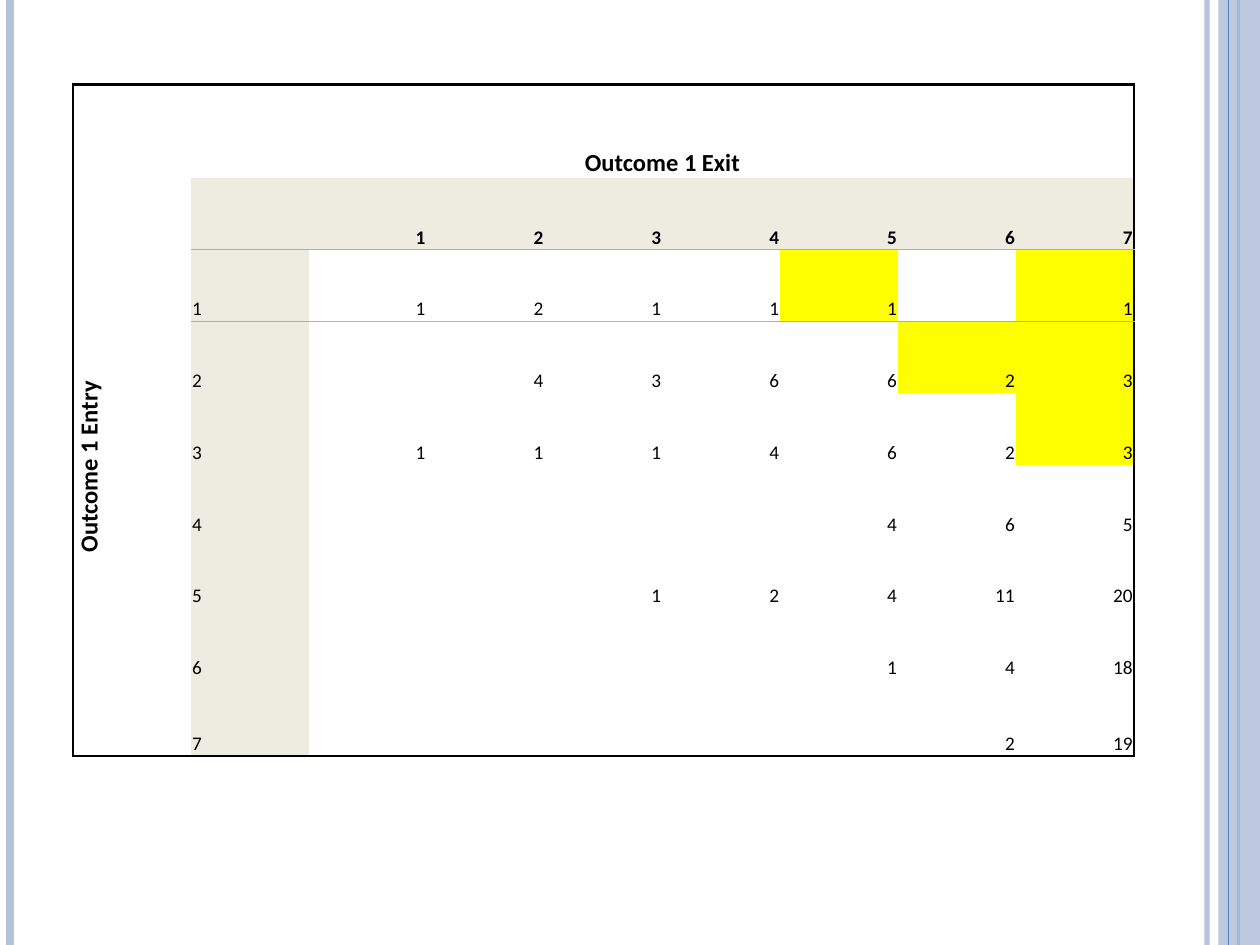
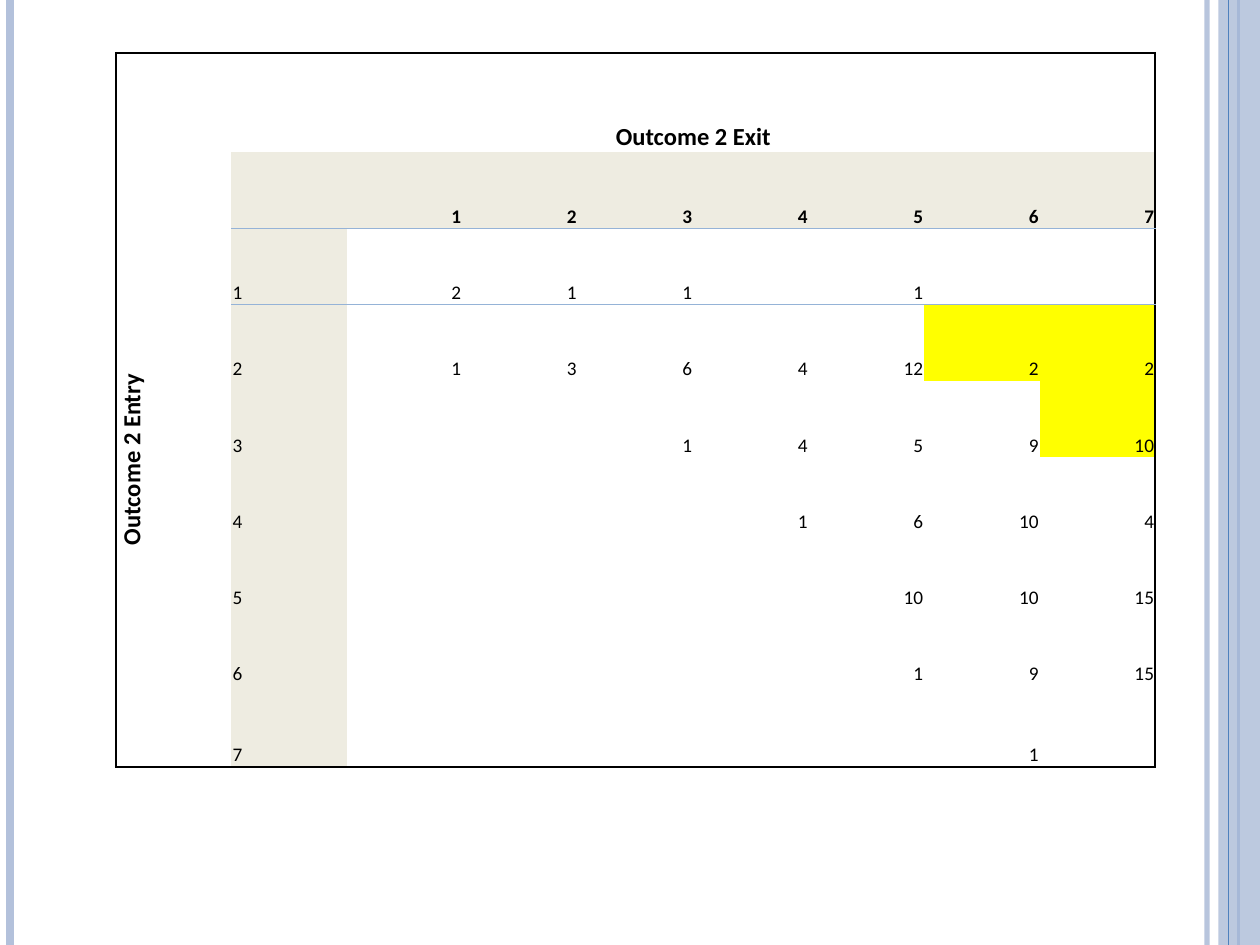
from lxml.etree import SubElement
from pptx import Presentation
from pptx.dml.color import RGBColor
from pptx.enum.shapes import MSO_CONNECTOR as Connector, MSO_SHAPE as Shape
from pptx.enum.text import MSO_ANCHOR as Anchor, PP_ALIGN as Align
from pptx.oxml.ns import qn
from pptx.util import Inches, Pt

COLORS = {
    "ink": "000000",
    "band": "B3C1DB",
    "accent": "4F81BD",
    "header": "EEECE1",
    "rule": "95B3D7",
    "highlight": "FFFF00",
}
FONT = "Calibri"
WIDTH, HEIGHT = Inches(10), Inches(7.5)
RATINGS = range(1, 8)
GRID = len(RATINGS) + 2
TITLE_SHARE, LAST_SHARE = 0.139, 0.113
PLAIN_STYLE = "{2D5ABB26-0587-4C30-8999-92F81FD0307C}"

OUTCOMES = [
    {
        "name": "Outcome 1",
        "frame": (0.58, 0.67, 8.42, 5.33),
        "counts": [
            [1, 2, 1, 1, 1, None, 1],
            [None, 4, 3, 6, 6, 2, 3],
            [1, 1, 1, 4, 6, 2, 3],
            [None, None, None, None, 4, 6, 5],
            [None, None, 1, 2, 4, 11, 20],
            [None, None, None, None, 1, 4, 18],
            [None, None, None, None, None, 2, 19],
        ],
        "large_gains": {(1, 5), (1, 7), (2, 6), (2, 7), (3, 7)},
    },
    {
        "name": "Outcome 2",
        "frame": (0.92, 0.42, 8.25, 5.67),
        "counts": [
            [2, 1, 1, None, 1, None, None],
            [1, 3, 6, 4, 12, 2, 2],
            [None, None, 1, 4, 5, 9, 10],
            [None, None, None, 1, 6, 10, 4],
            [None, None, None, None, 10, 10, 15],
            [None, None, None, None, 1, 9, 15],
            [None, None, None, None, None, 1, None],
        ],
        "large_gains": {(2, 6), (2, 7), (3, 7)},
    },
]


def rgb(role):
    return RGBColor.from_string(COLORS[role])


def set_opacity(properties, percent):
    color = next(properties.iter(qn("a:srgbClr")))
    SubElement(color, qn("a:alpha"), val=str(percent * 1000))


def add_stripe(slide, share, role, weight, opacity=100):
    x = int(WIDTH * share)
    stripe = slide.shapes.add_connector(Connector.STRAIGHT, x, 0, x, HEIGHT)
    stripe.line.color.rgb = rgb(role)
    stripe.line.width = Pt(weight)
    properties = stripe._element.spPr
    if opacity < 100:
        set_opacity(properties, opacity)
    SubElement(properties, qn("a:effectLst"))


def add_side_band(slide, share, opacity):
    left = int(WIDTH * share)
    band = slide.shapes.add_shape(Shape.RECTANGLE, left, 0, WIDTH - left, HEIGHT)
    band.shadow.inherit = False
    band.fill.solid()
    band.fill.fore_color.rgb = rgb("band")
    set_opacity(band._element.spPr, opacity)
    band.line.fill.background()


def add_margins(slide):
    add_stripe(slide, 0.958, "band", 3, 93)
    add_stripe(slide, 0.008, "band", 4.5)
    add_stripe(slide, 0.983, "accent", 1.5)
    add_side_band(slide, 0.967, 87)
    add_stripe(slide, 0.975, "accent", 0.75)


def cell_borders(cell, row, column):
    frame, rule = ("ink", 1.5), ("rule", 0.5)
    borders = {}
    if column == 0:
        borders["L"] = frame
    if column + cell.span_width == GRID:
        borders["R"] = frame
    if row == 0:
        borders["T"] = frame
    elif row == 2 and column > 0:
        borders["T"] = rule
    if row + cell.span_height == GRID:
        borders["B"] = frame
    elif row == 1 and column > 0:
        borders["B"] = rule
    return borders


def draw_borders(cell, borders):
    properties = cell._tc.get_or_add_tcPr()
    for side, (role, weight) in borders.items():
        edge = SubElement(properties, qn(f"a:ln{side}"), w=str(Pt(weight)))
        fill = SubElement(edge, qn("a:solidFill"))
        SubElement(fill, qn("a:srgbClr"), val=COLORS[role])


def fill_cell(cell, role):
    if role:
        cell.fill.solid()
        cell.fill.fore_color.rgb = rgb(role)
    else:
        cell.fill.background()


def write_cell(cell, text, align=Align.RIGHT, size=11, bold=False, anchor=Anchor.BOTTOM):
    cell.margin_left = cell.margin_right = cell.margin_top = Inches(0.01)
    cell.margin_bottom = 0
    cell.vertical_anchor = anchor
    paragraph = cell.text_frame.paragraphs[0]
    paragraph.alignment = align
    run = paragraph.add_run()
    run.text = str(text)
    run.font.name = FONT
    run.font.size = Pt(size)
    run.font.bold = bold
    run.font.color.rgb = rgb("ink")


def add_grid(slide, frame):
    left, top, width, height = map(Inches, frame)
    table = slide.shapes.add_table(GRID, GRID, left, top, width, height).table
    table.first_row = table.horz_banding = False
    next(table._tbl.iter(qn("a:tableStyleId"))).text = PLAIN_STYLE
    middle_share = (1 - TITLE_SHARE - LAST_SHARE) / (GRID - 2)
    shares = [TITLE_SHARE] + [middle_share] * (GRID - 2) + [LAST_SHARE]
    for row, share in zip(table.rows, shares):
        row.height = int(height * share)
    for column in table.columns:
        column.width = width // GRID
    table.cell(0, 1).merge(table.cell(0, GRID - 1))
    table.cell(1, 0).merge(table.cell(GRID - 1, 0))
    return table


def style_grid(table, large_gains):
    for row in range(GRID):
        for column in range(GRID):
            cell = table.cell(row, column)
            draw_borders(cell, cell_borders(cell, row, column))
            role = None
            if row and column and 1 in (row, column):
                role = "header"
            elif (row - 1, column - 1) in large_gains:
                role = "highlight"
            fill_cell(cell, role)


def add_crosstab(slide, name, frame, counts, large_gains):
    table = add_grid(slide, frame)
    style_grid(table, large_gains)
    write_cell(table.cell(0, 1), f"{name} Exit", Align.CENTER, 14, True)
    entry = table.cell(1, 0)
    write_cell(entry, f"{name} Entry", Align.CENTER, 14, True, Anchor.MIDDLE)
    entry._tc.tcPr.set("vert", "vert270")
    for rating, row_counts in zip(RATINGS, counts):
        write_cell(table.cell(1, rating + 1), rating, bold=True)
        write_cell(table.cell(rating + 1, 1), rating, Align.LEFT)
        for exit_rating, count in zip(RATINGS, row_counts):
            if count is not None:
                write_cell(table.cell(rating + 1, exit_rating + 1), count)


def main():
    deck = Presentation()
    deck.slide_width, deck.slide_height = WIDTH, HEIGHT
    for outcome in OUTCOMES:
        slide = deck.slides.add_slide(deck.slide_layouts[6])
        add_margins(slide)
        add_crosstab(slide, **outcome)
    deck.save("out.pptx")


if __name__ == "__main__":
    main()
